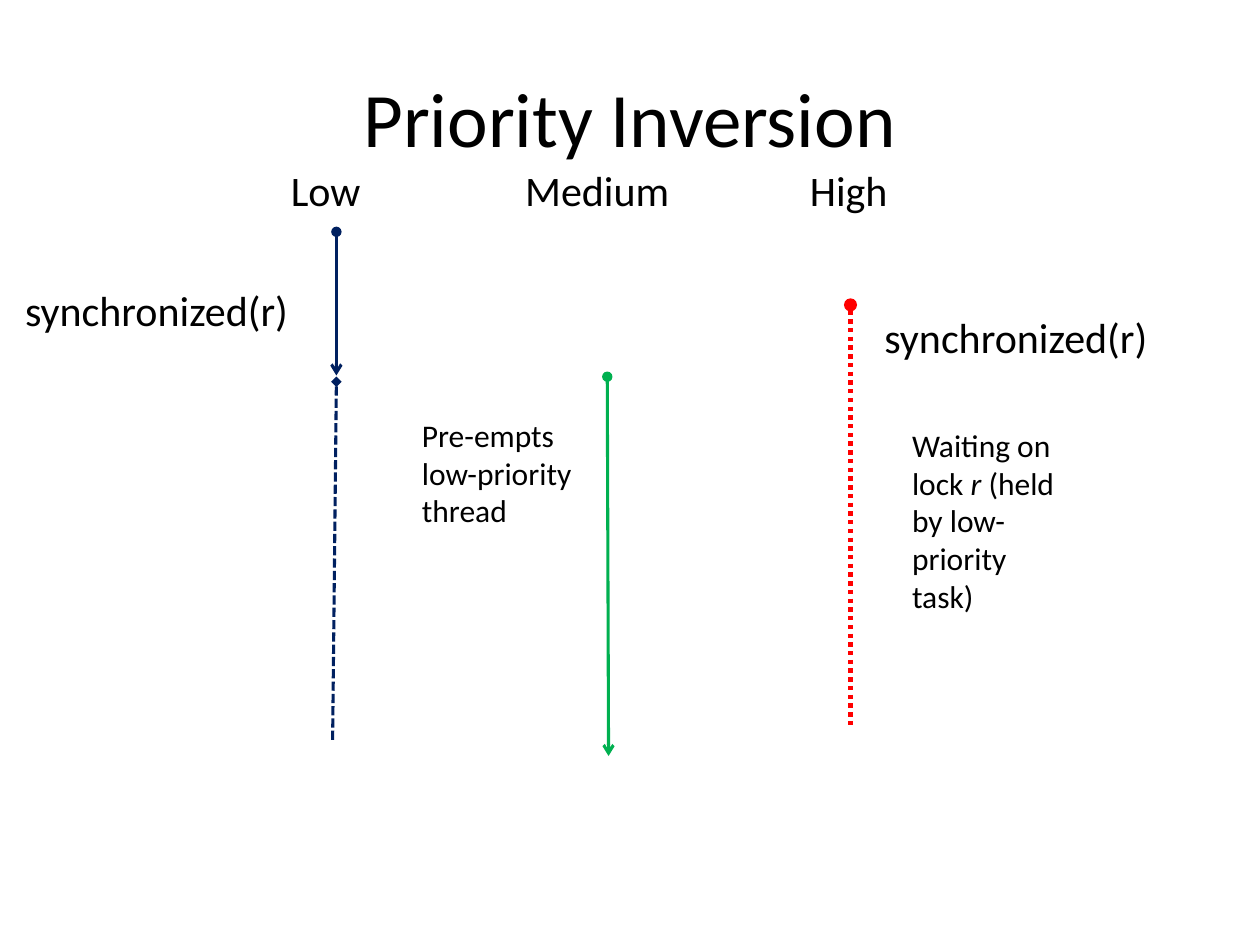
from lxml import etree
from pptx import Presentation
from pptx.dml.color import RGBColor
from pptx.enum.dml import MSO_LINE
from pptx.enum.shapes import MSO_CONNECTOR
from pptx.enum.text import MSO_ANCHOR, MSO_AUTO_SIZE, PP_ALIGN
from pptx.oxml.ns import qn
from pptx.util import Inches, Pt

STRAIGHT = MSO_CONNECTOR.STRAIGHT
DASH, DOT = MSO_LINE.SQUARE_DOT, MSO_LINE.ROUND_DOT
MIDDLE = MSO_ANCHOR.MIDDLE
FIT_SHAPE = MSO_AUTO_SIZE.SHAPE_TO_FIT_TEXT
LEFT, CENTER = PP_ALIGN.LEFT, PP_ALIGN.CENTER

BLACK = RGBColor(0x00, 0x00, 0x00)
NAVY = RGBColor(0x00, 0x20, 0x60)
GREEN = RGBColor(0x00, 0xB0, 0x50)
RED = RGBColor(0xFF, 0x00, 0x00)
FONT = "Calibri"
LABEL_SIZE, NOTE_SIZE = 24, 18
HEADING_TOP = 1.26


def add_run(paragraph, text, size, italic=False):
    run = paragraph.add_run()
    run.text = text
    run.font.name = FONT
    run.font.size = Pt(size)
    run.font.italic = italic
    run.font.color.rgb = BLACK


def place_title(slide, box, text):
    title = slide.shapes.title
    title.left, title.top, title.width, title.height = map(Inches, box)
    title.text_frame.vertical_anchor = MIDDLE
    paragraph = title.text_frame.paragraphs[0]
    paragraph.alignment = CENTER
    add_run(paragraph, text, 44)


def add_text(slide, box, runs, size, wrap=False):
    """Place a text box; runs holds (text, italic) pairs."""
    frame = slide.shapes.add_textbox(*map(Inches, box)).text_frame
    frame.word_wrap = wrap
    frame.auto_size = FIT_SHAPE
    paragraph = frame.paragraphs[0]
    paragraph.alignment = LEFT
    for text, italic in runs:
        add_run(paragraph, text, size, italic)


def add_label(slide, box, text):
    add_text(slide, box, [(text, False)], LABEL_SIZE)


def add_note(slide, box, runs):
    add_text(slide, box, runs, NOTE_SIZE, wrap=True)


def add_timeline(slide, start, end, color, head, tail=None, width=1.75, dash=None):
    connector = slide.shapes.add_connector(STRAIGHT, *map(Inches, start + end))
    line = connector.line
    line.color.rgb = color
    line.width = Pt(width)
    if dash is not None:
        line.dash_style = dash
    line_xml = line._get_or_add_ln()
    for tag, kind in (("a:headEnd", head), ("a:tailEnd", tail)):
        if kind:
            etree.SubElement(line_xml, qn(tag), type=kind)
    etree.SubElement(connector._element.spPr, qn("a:effectLst"))


def add_low_thread(slide, left):
    add_label(slide, (left, HEADING_TOP, 0.87, 0.51), "Low")
    add_label(slide, (0.1, 2.21, 2.31, 0.5), "synchronized(r)")
    # Running, then pre-empted
    x = left + 0.46
    add_timeline(slide, (x, 1.84), (x, 2.98), NAVY, "oval", "arrow")
    add_timeline(slide, (x, 3.03), (x - 0.03, 5.88), NAVY, "diamond", dash=DASH)


def add_medium_thread(slide, left):
    add_label(slide, (left, HEADING_TOP, 1.53, 0.51), "Medium")
    x = left + 0.75
    add_timeline(slide, (x, 2.99), (x + 0.01, 6), GREEN, "oval", "arrow")
    add_note(slide, (3.25, 3.25, 1.45, 1.01),
             [("Pre-empts low-priority thread", False)])


def add_high_thread(slide, left):
    add_label(slide, (left, HEADING_TOP, 0.97, 0.51), "High")
    x = left + 0.42
    add_timeline(slide, (x, 2.42), (x, 5.75), RED, "oval", width=2.5, dash=DOT)
    add_label(slide, (6.92, 2.42, 2.31, 0.5), "synchronized(r)")
    add_note(slide, (7.14, 3.33, 1.45, 1.62),
             [("Waiting on lock ", False), ("r", True),
              (" (held by low-priority task)", False)])


def main():
    presentation = Presentation()
    presentation.slide_width, presentation.slide_height = Inches(10), Inches(7.5)
    title_only = presentation.slide_layouts[5]
    slide = presentation.slides.add_slide(title_only)
    place_title(slide, (0.5, 0.3, 9, 1.25), "Priority Inversion")
    # One column per thread priority
    add_low_thread(slide, 2.21)
    add_medium_thread(slide, 4.07)
    add_high_thread(slide, 6.33)
    presentation.save("out.pptx")


if __name__ == "__main__":
    main()
